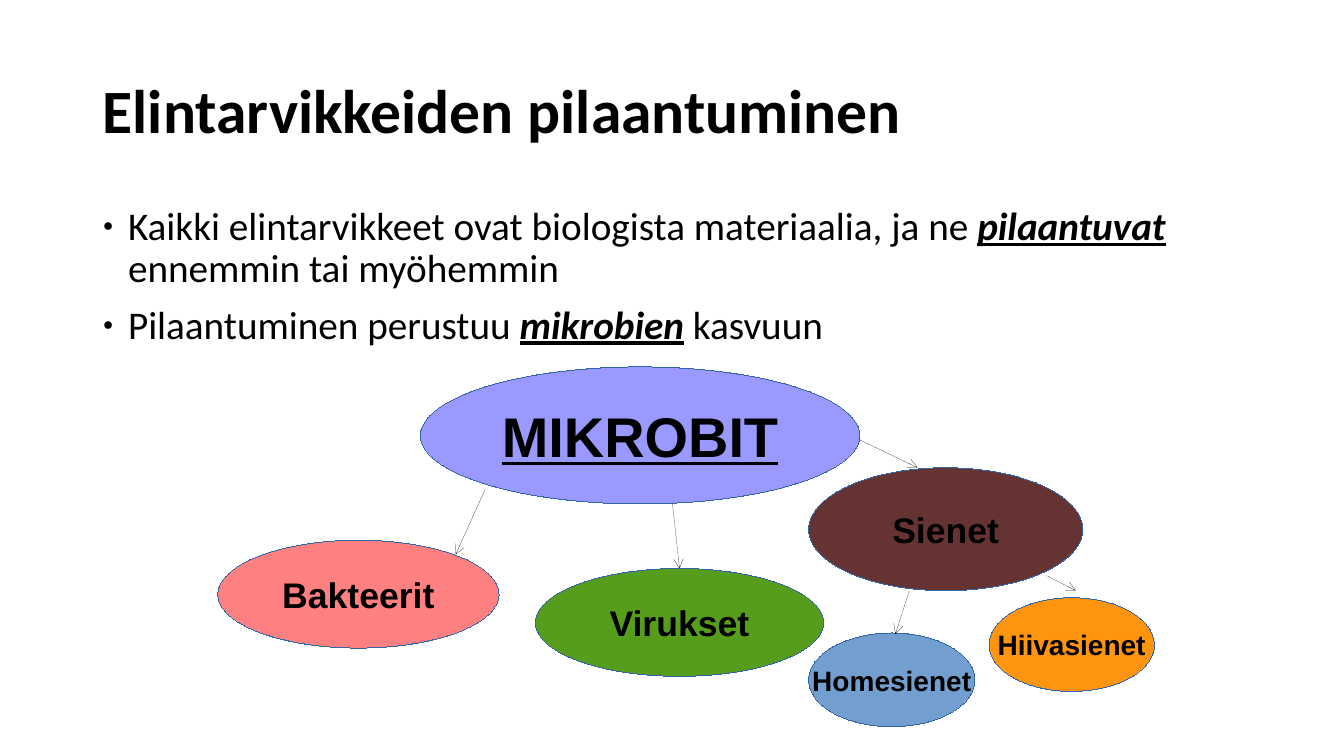
from typing import NamedTuple

from lxml.etree import SubElement
from pptx import Presentation
from pptx.dml.color import RGBColor
from pptx.enum.shapes import MSO_CONNECTOR as Connector, MSO_SHAPE as Preset
from pptx.enum.text import MSO_ANCHOR as Anchor, MSO_AUTO_SIZE as AutoSize, PP_ALIGN as Align
from pptx.oxml.ns import qn
from pptx.util import Emu, Pt

PX = 9144
BLACK = RGBColor(0x00, 0x00, 0x00)
OUTLINE = RGBColor(0x34, 0x65, 0xA4)
LILAC = RGBColor(0x99, 0x99, 0xFF)
PINK = RGBColor(0xFF, 0x80, 0x80)
GREEN = RGBColor(0x57, 0x9D, 0x1C)
BROWN = RGBColor(0x66, 0x33, 0x33)
BLUE = RGBColor(0x72, 0x9F, 0xCF)
ORANGE = RGBColor(0xFF, 0x95, 0x0E)

TITLE_FONT = {"name": "Calibri", "size": Pt(44), "bold": True}
BODY_FONT = {"name": "Calibri", "size": Pt(28), "bold": False}
EMPHASIS = {"bold": True, "italic": True, "underline": True}
OVAL_FONT = {"name": "Arial", "bold": True}


class Box(NamedTuple):
    left: int
    top: int
    width: int
    height: int


class Oval(NamedTuple):
    label: str
    box: Box
    fill: RGBColor
    font: dict


class Arrow(NamedTuple):
    begin: tuple[int, int]
    end: tuple[int, int]
    top_of: str = ""


class Bullet(NamedTuple):
    before: str
    stressed: str
    after: str


TITLE_BOX = Box(92, 40, 1150, 145)
BODY_BOX = Box(92, 200, 1150, 476)

BULLETS = [
    Bullet("Kaikki elintarvikkeet ovat biologista materiaalia, ja ne ", "pilaantuvat", " ennemmin tai myöhemmin"),
    Bullet("Pilaantuminen perustuu ", "mikrobien", " kasvuun"),
]

MAIN = {"size": Pt(39.9), "underline": True}
GROUP = {"size": Pt(25.4)}
SUBGROUP = {"size": Pt(20)}
OVALS = [
    Oval("MIKROBIT", Box(417, 364, 436, 136), LILAC, MAIN),
    Oval("Bakteerit", Box(216, 536, 279, 107), PINK, GROUP),
    Oval("Virukset", Box(531, 564, 286, 107), GREEN, GROUP),
    Oval("Sienet", Box(802, 464, 272, 122), BROWN, GROUP),
    Oval("Homesienet", Box(802, 628, 165, 93), BLUE, SUBGROUP),
    Oval("Hiivasienet", Box(981, 593, 164, 93), ORANGE, SUBGROUP),
]

ARROWS = [
    Arrow((481, 486), (452, 550)),
    Arrow((667, 500), (674, 564), "Virukset"),
    Arrow((852, 436), (910, 464)),
    Arrow((902, 586), (888, 629)),
    Arrow((1038, 571), (1067, 586)),
]


def set_all(target, values: dict) -> None:
    for name, value in values.items():
        setattr(target, name, value)


def scaled(lengths) -> list[Emu]:
    return [Emu(length * PX) for length in lengths]


def place(shape, box: Box) -> None:
    set_all(shape, dict(zip(box._fields, scaled(box))))


def add_run(paragraph, text: str, font: dict) -> None:
    run = paragraph.add_run()
    run.text = text
    set_all(run.font, font)
    run.font.color.rgb = BLACK


def set_hairline(shape, color: RGBColor):
    shape.line.color.rgb = color
    line = shape._element.spPr.find(qn("a:ln"))
    line.set("w", "0")
    return line


def fill_title(shape) -> None:
    place(shape, TITLE_BOX)
    set_all(shape.text_frame, {"auto_size": AutoSize.NONE, "vertical_anchor": Anchor.MIDDLE})
    paragraph = shape.text_frame.paragraphs[0]
    set_all(paragraph, {"alignment": Align.LEFT, "line_spacing": 0.9})
    add_run(paragraph, "Elintarvikkeiden pilaantuminen", TITLE_FONT)


def fill_body(shape, bullets: list[Bullet]) -> None:
    place(shape, BODY_BOX)
    frame = shape.text_frame
    frame.auto_size = AutoSize.NONE
    for index, bullet in enumerate(bullets):
        paragraph = frame.add_paragraph() if index else frame.paragraphs[0]
        properties = paragraph._p.get_or_add_pPr()
        properties.set("marL", str(25 * PX))
        properties.set("indent", str(-25 * PX))
        SubElement(properties, qn("a:buSzPct"), val="45000")
        SubElement(properties, qn("a:buFont"), typeface="Arial")
        SubElement(properties, qn("a:buChar"), char="●")
        set_all(paragraph, {"line_spacing": 0.9, "space_before": Pt(10 if index else 0)})
        add_run(paragraph, bullet.before, BODY_FONT)
        add_run(paragraph, bullet.stressed, BODY_FONT | EMPHASIS)
        add_run(paragraph, bullet.after, BODY_FONT)


def add_oval(slide, oval: Oval):
    shape = slide.shapes.add_shape(Preset.OVAL, *scaled(oval.box))
    shape.shadow.inherit = False
    shape.fill.solid()
    shape.fill.fore_color.rgb = oval.fill
    set_hairline(shape, OUTLINE)
    frame = shape.text_frame
    side, edge = scaled((9, 4))
    set_all(frame, {
        "word_wrap": False, "vertical_anchor": Anchor.MIDDLE,
        "margin_left": side, "margin_right": side, "margin_top": edge, "margin_bottom": edge,
    })
    paragraph = frame.paragraphs[0]
    paragraph.alignment = Align.CENTER
    add_run(paragraph, oval.label, OVAL_FONT | oval.font)
    return shape


def add_arrow(slide, arrow: Arrow, ovals: dict) -> None:
    connector = slide.shapes.add_connector(Connector.STRAIGHT, *scaled(arrow.begin + arrow.end))
    if arrow.top_of:
        connector.end_connect(ovals[arrow.top_of], 0)
    line = set_hairline(connector, BLACK)
    SubElement(line, qn("a:tailEnd"), type="arrow")
    SubElement(connector._element.spPr, qn("a:effectLst"))


def main() -> None:
    presentation = Presentation()
    presentation.slide_width, presentation.slide_height = scaled((1333, 750))
    slide = presentation.slides.add_slide(presentation.slide_layouts[1])
    fill_title(slide.shapes.title)
    fill_body(slide.placeholders[1], BULLETS)
    ovals = {oval.label: add_oval(slide, oval) for oval in OVALS}
    for arrow in ARROWS:
        add_arrow(slide, arrow, ovals)
    presentation.save("out.pptx")


if __name__ == "__main__":
    main()
